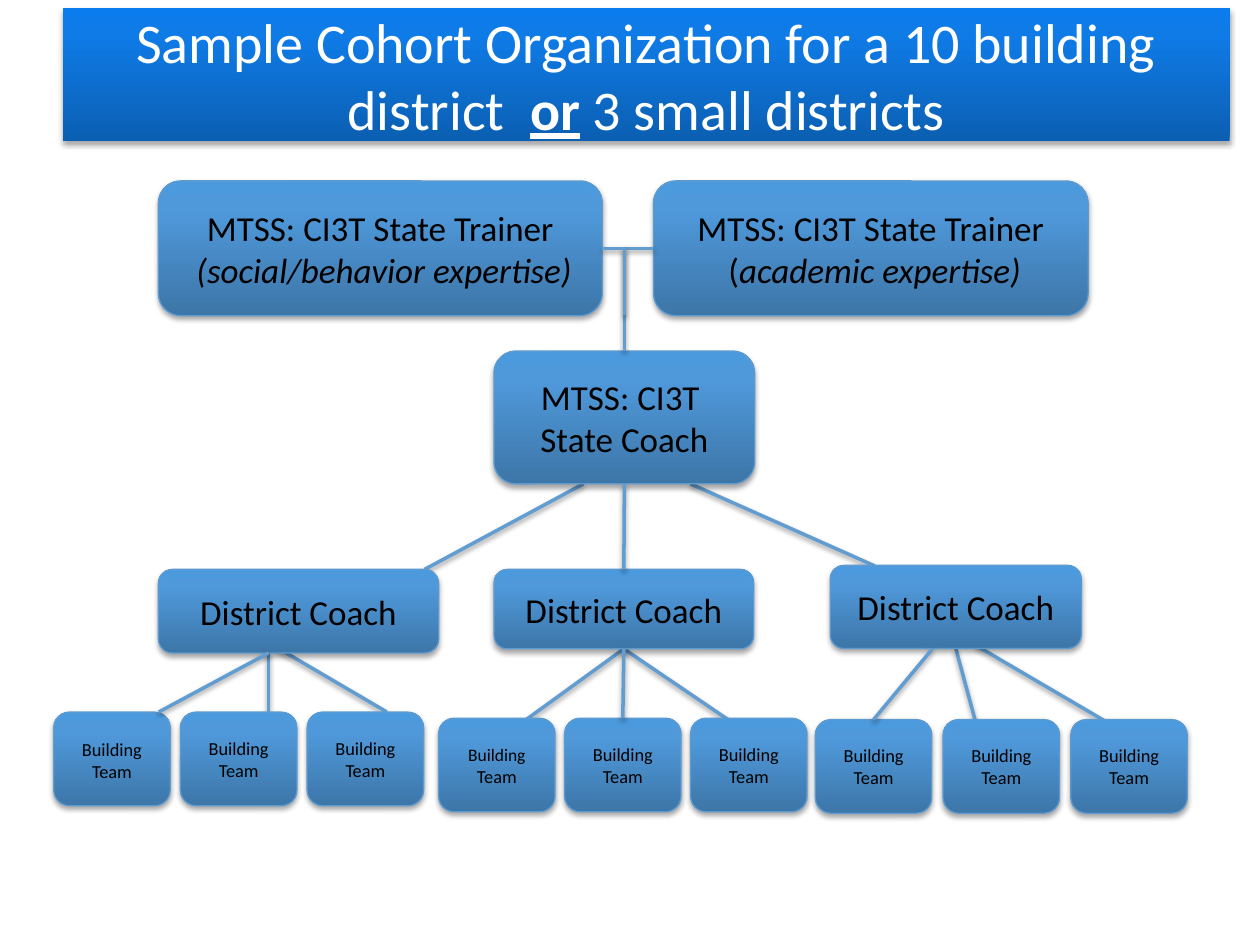
from lxml import etree
from pptx import Presentation
from pptx.dml.color import RGBColor
from pptx.enum.shapes import MSO_CONNECTOR, MSO_SHAPE
from pptx.enum.text import MSO_ANCHOR, PP_ALIGN
from pptx.oxml import parse_xml
from pptx.util import Pt

RECTANGLE = MSO_SHAPE.RECTANGLE
ROUNDED = MSO_SHAPE.ROUNDED_RECTANGLE
STRAIGHT = MSO_CONNECTOR.STRAIGHT
ELBOW = MSO_CONNECTOR.ELBOW
CENTER = PP_ALIGN.CENTER
MIDDLE = MSO_ANCHOR.MIDDLE
TOP, BOTTOM = 0, 2
NAMESPACE = "http://schemas.openxmlformats.org/drawingml/2006/main"
COLORS = {
    "title": ("0B5FB2", "0F7BE7", "0B7CED"),
    "box": ("3D76A8", "4F99DB", "4C9ADE"),
    "border": "5D9ACF",
    "link": "629DD1",
    "title_text": "FFFFFF",
    "box_text": "000000",
    "shadow": "000000",
}


class Chart:
    font = "Calibri"

    def __init__(self, slide):
        self.shapes = slide.shapes

    def shadow(self, shape, opacity, distance):
        properties = shape._element.spPr
        for old in properties.findall(f"{{{NAMESPACE}}}effectLst"):
            properties.remove(old)
        properties.append(parse_xml(
            f'<a:effectLst xmlns:a="{NAMESPACE}">'
            f'<a:outerShdw blurRad="{Pt(3.1)}" dist="{Pt(distance)}" dir="5400000" rotWithShape="0">'
            f'<a:srgbClr val="{COLORS["shadow"]}"><a:alpha val="{opacity * 1000}"/></a:srgbClr>'
            '</a:outerShdw></a:effectLst>'))

    def gradient(self, shape, colors):
        shape.fill.gradient()
        shape.fill.gradient_angle = 90
        stops = shape._element.spPr.find(f".//{{{NAMESPACE}}}gsLst")
        for old in list(stops):
            stops.remove(old)
        for position, color in zip((0, 80, 100), colors):
            stop = etree.SubElement(stops, f"{{{NAMESPACE}}}gs", pos=str(position * 1000))
            etree.SubElement(stop, f"{{{NAMESPACE}}}srgbClr", val=color)

    def box(self, left, top, width, height, lines, size=20, kind="box", shape=ROUNDED):
        box = self.shapes.add_shape(shape, Pt(left), Pt(top), Pt(width), Pt(height))
        self.gradient(box, COLORS[kind])
        if kind == "box":
            box.line.color.rgb = RGBColor.from_string(COLORS["border"])
            box.line.width = Pt(0.75)
        else:
            box.line.fill.background()
        self.shadow(box, 35, 1.8)
        frame = box.text_frame
        frame.word_wrap = True
        frame.vertical_anchor = MIDDLE
        for index, spans in enumerate(lines):
            para = frame.add_paragraph() if index else frame.paragraphs[0]
            para.alignment = CENTER
            para.font.name = self.font
            para.font.size = Pt(size)
            para.font.color.rgb = RGBColor.from_string(COLORS[f"{kind}_text"])
            for text, style in spans:
                span = para.add_run()
                span.text = text
                for name, value in style.items():
                    setattr(span.font, name, value)
        return box

    def link(self, start, end, source=None, target=None, behind=False, kind=STRAIGHT):
        link = self.shapes.add_connector(kind, *(Pt(value) for value in start + end))
        if source:
            link.begin_connect(source, BOTTOM)
        if target:
            link.end_connect(target, TOP)
        if kind == ELBOW:
            link._element.spPr.find(f"{{{NAMESPACE}}}prstGeom").set("prst", "bentConnector2")
        link.line.color.rgb = RGBColor.from_string(COLORS["link"])
        link.line.width = Pt(2)
        self.shadow(link, 38, 1.6)
        if behind:
            self.shapes.element.insert(2, link._element)


def main():
    deck = Presentation()
    deck.slide_width, deck.slide_height = Pt(720), Pt(540)
    page = deck.slides.add_slide(deck.slide_layouts[6])
    chart = Chart(page)

    chart.box(36, 4.5, 666.7, 76.1, [[
        ("Sample Cohort Organization for a 10 building district  ", {}),
        ("or", {"bold": True, "underline": True}),
        (" 3 small districts", {}),
    ]], size=32, kind="title", shape=RECTANGLE)

    trainer = [("MTSS: CI3T State Trainer", {})]
    italic = {"italic": True}
    chart.box(90.5, 103.4, 253.7, 77,
              [trainer, [(" ", {}), ("(social/behavior expertise)", italic)]])
    chart.box(373.4, 103.4, 248.4, 77,
              [trainer, [(" (", {}), ("academic expertise)", italic)]])
    state_coach = chart.box(282.3, 200.6, 149, 75.9,
                            [[("MTSS: CI3T ", {})], [("State Coach", {})]])

    coach_places = (
        (90.5, 325.4, 160.2, 47.8),
        (282.3, 325.4, 148.4, 45.4),
        (474.4, 323.1, 143.6, 47.5),
    )
    left_coach, middle_coach, right_coach = [
        chart.box(*place, [[("District Coach", {})]]) for place in coach_places
    ]

    team_texts = {
        (0, 0): [("Building", {}), (" ", {"size": Pt(12)}), ("Team", {})],
        (1, 0): [("Building", {"size": Pt(10)}), (" Team", {})],
    }
    team_rows = ((30.7, 72.4, 406.9), (250.6, 72, 410.4), (465.9, 73, 411.2))
    teams = [
        [chart.box(left + pitch * column, top, 66.6, 53.5,
                   [team_texts.get((row, column), [("Building Team", {})])], size=10.5)
         for column in range(3)]
        for row, (left, pitch, top) in enumerate(team_rows)
    ]

    axis = 356.9
    chart.link((373.4, 142), (axis, 200.6), kind=ELBOW)
    chart.link((344.2, 142), (axis, 180.3), kind=ELBOW)

    chart.link((axis, 276.5), (axis, 325.4), state_coach, middle_coach)
    chart.link((153.4, 373.2), (90.7, 406.9))
    chart.link((axis, 370.8), (axis, 410.4), middle_coach, teams[1][1])
    chart.link((532.8, 370.8), (499.7, 411.1), target=teams[2][0])

    hidden_links = (
        ((153.4, 367.2), (221, 406.8), None),
        ((333.4, 276.5), (242.6, 325.4), None),
        ((394.6, 276.5), (499.7, 323.3), None),
        ((axis, 370.8), (293.8, 416.2), middle_coach),
        ((153.4, 373), (153.4, 411.1), None),
        ((546.2, 370.8), (557.3, 411.8), right_coach),
        ((557.3, 368.6), (638.6, 416.2), None),
        ((axis, 370.8), (423.4, 416.2), middle_coach),
    )
    for start, end, source in hidden_links:
        chart.link(start, end, source, behind=True)

    deck.save("out.pptx")


if __name__ == "__main__":
    main()
